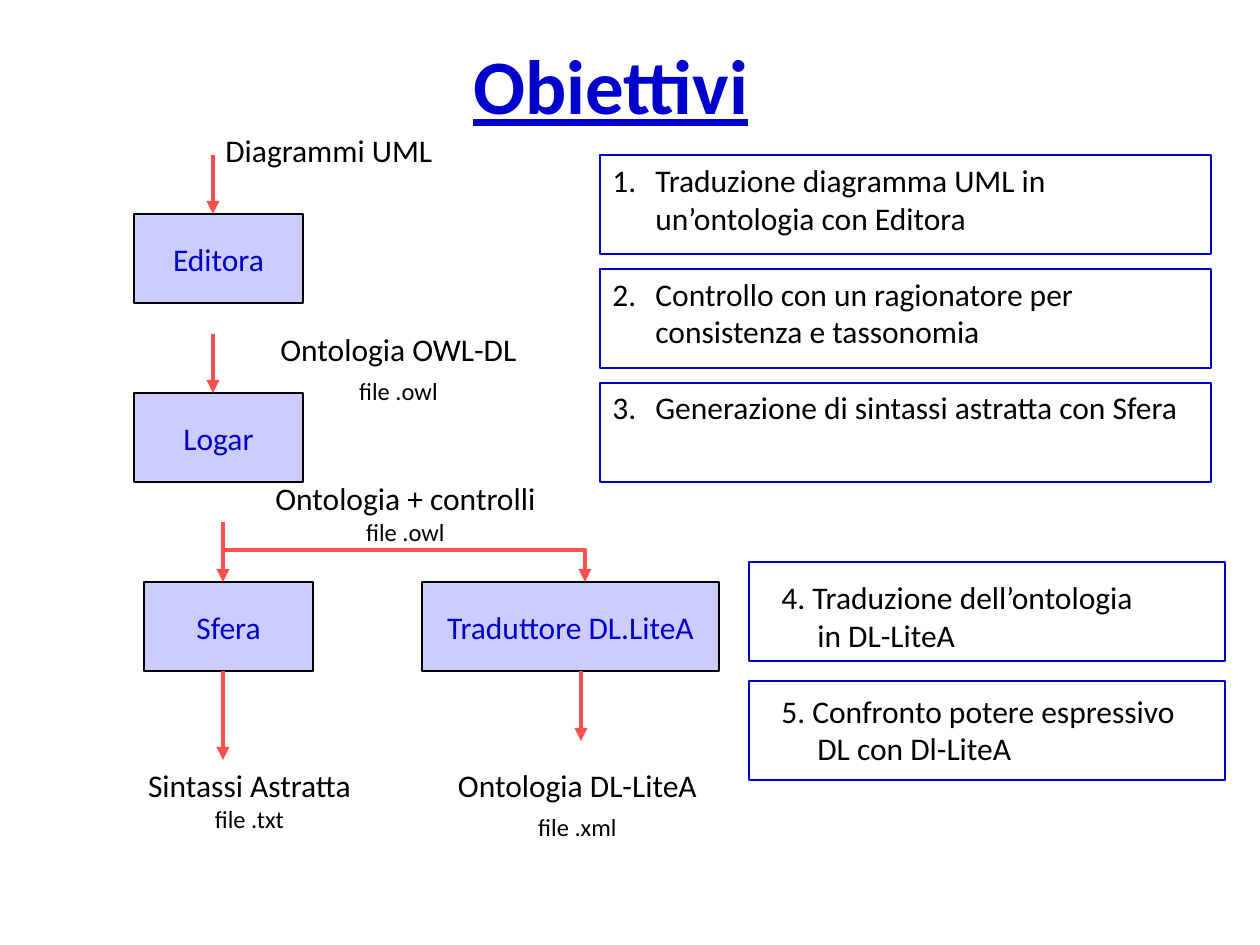
from dataclasses import dataclass

import pptx
import pptx.dml.color
import pptx.enum.shapes
import pptx.enum.text
import pptx.oxml
import pptx.oxml.ns
import pptx.util

PX = 914400 // 126
FONT = "Calibri"
COLORS = {"blue": "0000CC", "lilac": "CCCCFF", "red": "FF5050", "black": "000000"}
ALIGN = pptx.enum.text.PP_ALIGN
ANCHOR = pptx.enum.text.MSO_ANCHOR
CONNECTOR = pptx.enum.shapes.MSO_CONNECTOR
LINE_GAP = 21.6  # one text line, in points


@dataclass
class Box:
    x: int
    y: int
    w: int
    h: int
    text: str = ""


@dataclass
class Label:
    box: Box
    file: str = ""
    gap: float = 0


@dataclass
class Arrow:
    x: int
    y1: int
    y2: int


def px(*values: int) -> list:
    return [pptx.util.Emu(v * PX) for v in values]


def rgb(name: str):
    return pptx.dml.color.RGBColor.from_string(COLORS[name])


def add_sub(parent, tag: str, **attrs: str):
    el = pptx.oxml.parse_xml(f"<{tag} {pptx.oxml.ns.nsdecls('a')}/>")
    for key, value in attrs.items():
        el.set(key, value)
    parent.append(el)
    return el


def add_text(tf, text: str, size=18, color="black", align=ALIGN.LEFT, before=0,
             bold=False, underline=False, indent=0, number=0):
    """Write one paragraph, using the frame's first one while it is empty."""
    p = tf.paragraphs[0] if not tf.paragraphs[0].runs else tf.add_paragraph()
    p.alignment = align
    p.space_before = pptx.util.Pt(before)
    r = p.add_run()
    r.text = text
    r.font.name, r.font.size = FONT, pptx.util.Pt(size)
    r.font.bold, r.font.underline = bold, underline
    r.font.color.rgb = rgb(color)
    pPr = p._p.get_or_add_pPr()
    if indent:
        pPr.set("marL", str(indent * PX))
    if number:
        pPr.set("indent", str(-indent * PX))
        add_sub(pPr, "a:buFont", typeface="+mj-lt")
        add_sub(pPr, "a:buAutoNum", type="arabicPeriod", startAt=str(number))
    return p


def add_frame(s, box: Box, anchor=ANCHOR.TOP):
    tf = s.shapes.add_textbox(*px(box.x, box.y, box.w, box.h)).text_frame
    tf.word_wrap = True
    tf.vertical_anchor = anchor
    return tf


def add_box(s, box: Box, line: str, width: float, fill: str = ""):
    sp = s.shapes.add_shape(pptx.enum.shapes.MSO_SHAPE.RECTANGLE,
                            *px(box.x, box.y, box.w, box.h))
    sp.shadow.inherit = False
    if fill:
        sp.fill.solid()
        sp.fill.fore_color.rgb = rgb(fill)
    else:
        sp.fill.background()
    sp.line.color.rgb = rgb(line)
    sp.line.width = pptx.util.Pt(width)
    if box.text:
        tf = sp.text_frame
        tf.word_wrap = False
        tf.vertical_anchor = ANCHOR.MIDDLE
        add_text(tf, box.text, color="blue", align=ALIGN.CENTER)


def add_connector(s, kind, x1: int, y1: int, x2: int, y2: int):
    cn = s.shapes.add_connector(kind, *px(x1, y1, x2, y2))
    cn.line.color.rgb = rgb("red")
    cn.line.width = pptx.util.Pt(2.5)
    add_sub(cn.line._get_or_add_ln(), "a:tailEnd", type="triangle")
    add_sub(cn._element.spPr, "a:effectLst")
    return cn


def add_branch(s, x1: int, y1: int, x2: int, y2: int, bend: int):
    """Elbow that leaves and arrives vertically: a horizontal one turned by 90°."""
    cx, cy = (x1 + x2) // 2, (y1 + y2) // 2
    half_w, half_h = (y2 - y1) // 2, (x2 - x1) // 2
    cn = add_connector(s, CONNECTOR.ELBOW, cx - half_w, cy + half_h,
                       cx + half_w, cy - half_h)
    spPr = cn._element.spPr
    spPr.find(pptx.oxml.ns.qn("a:xfrm")).set("rot", "5400000")
    av = spPr.find(pptx.oxml.ns.qn("a:prstGeom")).find(pptx.oxml.ns.qn("a:avLst"))
    add_sub(av, "a:gd", name="adj1", fmla=f"val {bend * 1000}")


TITLE = Box(44, 55, 1134, 58, "Obiettivi")
TOOLS = [
    Box(134, 214, 169, 89, "Editora"),
    Box(134, 393, 169, 89, "Logar"),
    Box(144, 582, 169, 89, "Sfera"),
    Box(422, 582, 297, 89, "Traduttore DL.LiteA"),
]
LABELS = [
    Label(Box(213, 125, 253, 50, "Diagrammi UML")),
    Label(Box(253, 324, 291, 88, "Ontologia OWL-DL"), "file .owl", 4.5),
    Label(Box(253, 473, 305, 79, "Ontologia + controlli"), "file .owl"),
    Label(Box(123, 760, 253, 79, "Sintassi Astratta"), "file .txt"),
    Label(Box(432, 760, 291, 88, "Ontologia DL-LiteA"), "file .xml", 4.5),
]
ARROWS = [Arrow(213, 155, 214), Arrow(213, 334, 393), Arrow(223, 522, 582),
          Arrow(223, 671, 760), Arrow(581, 671, 741)]
GOALS = [
    "Traduzione diagramma UML in un’ontologia con Editora",
    "Controllo con un ragionatore per consistenza e tassonomia",
    "Generazione di sintassi astratta con Sfera",
]
LATE_GOALS = [
    ("4. Traduzione dell’ontologia", "in DL-LiteA"),
    ("5. Confronto potere espressivo", "DL con Dl-LiteA"),
]


def main():
    prs = pptx.Presentation()
    prs.slide_width, prs.slide_height = px(1260, 945)
    s = prs.slides.add_slide(prs.slide_layouts[6])

    # Title
    add_text(add_frame(s, TITLE, ANCHOR.MIDDLE), TITLE.text, size=44, color="blue",
             align=ALIGN.CENTER, bold=True, underline=True)

    # Flow of tools and files
    for tool in TOOLS:
        add_box(s, tool, "black", 1.5, "lilac")
    for label in LABELS:
        tf = add_frame(s, label.box)
        align = ALIGN.CENTER if label.file else ALIGN.LEFT
        add_text(tf, label.box.text, align=align)
        if label.file:
            add_text(tf, label.file, size=14, align=align, before=label.gap)
    for a in ARROWS:
        add_connector(s, CONNECTOR.STRAIGHT, a.x, a.y1, a.x, a.y2)
    add_branch(s, 223, 522, 585, 582, 47)

    # Goals 1 to 3
    tf = add_frame(s, Box(600, 155, 615, 315))
    for i, goal in enumerate(GOALS):
        add_text(tf, goal, indent=43, number=i + 1, before=LINE_GAP if i else 0)
        add_box(s, Box(600, 155 + 114 * i, 611, 99), "blue", 1.25)

    # Goals 4 and 5
    tf = add_frame(s, Box(769, 572, 465, 239))
    for i, (first, second) in enumerate(LATE_GOALS):
        add_text(tf, first, before=LINE_GAP if i else 0)
        add_text(tf, second, indent=36)
        add_box(s, Box(749, 562 + 119 * i, 476, 99), "blue", 1.25)

    prs.save("out.pptx")


if __name__ == "__main__":
    main()
